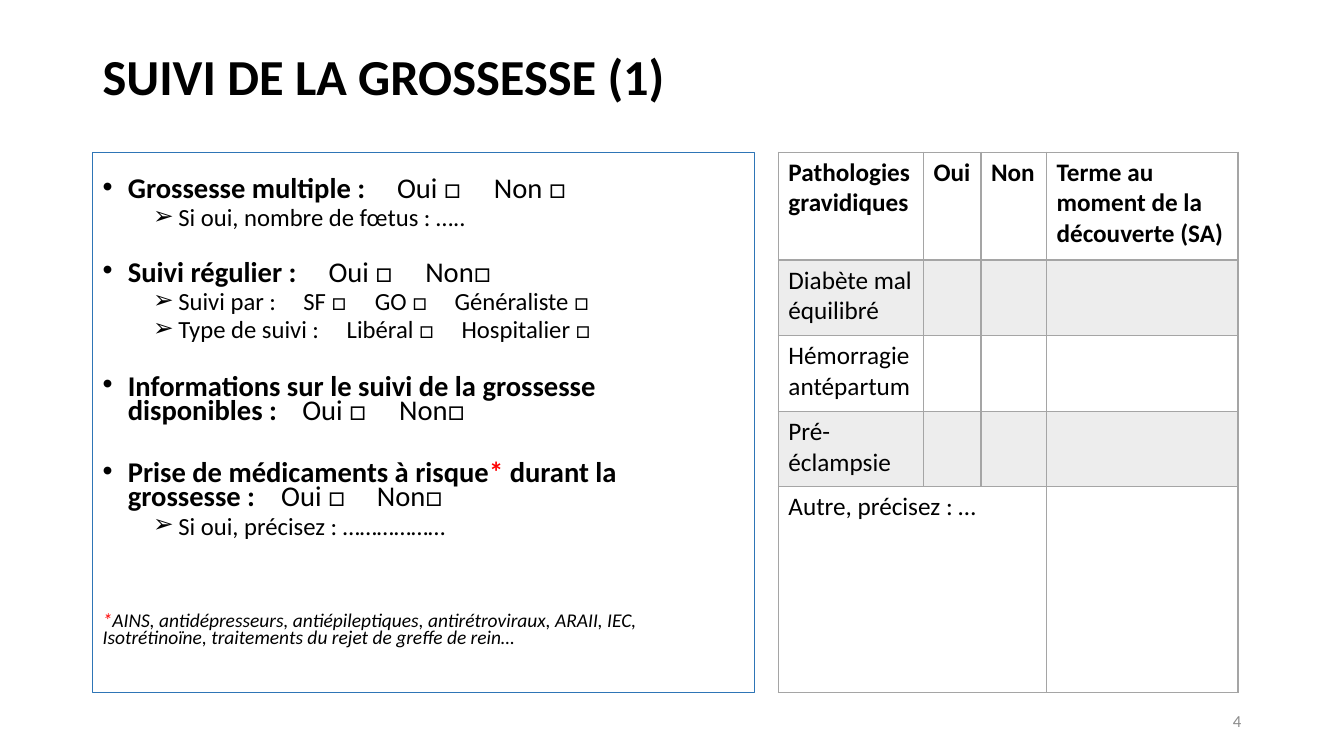
"""Build the pregnancy follow-up form slide."""
from lxml import etree
from pptx import Presentation, util as u
from pptx.dml import color
from pptx.enum import shapes, text
from pptx.oxml import ns

BLACK, RED, GREY = "000000", "FF0000", "A5A5A5"


def style(font, size, hex_color=BLACK, bold=False, italic=False):
    font.name, font.size = "Calibri", u.Pt(size)
    font.bold, font.italic = bold, italic
    font.color.rgb = color.RGBColor.from_string(hex_color)


def add(parent, tag, **attrs):
    return etree.SubElement(parent, ns.qn(tag), {k: str(v) for k, v in attrs.items()})


prs = Presentation()
prs.slide_width, prs.slide_height = u.Inches(13.33), u.Inches(7.5)
s = prs.slides.add_slide(prs.slide_layouts[6])

sp = s.shapes.add_shape(shapes.MSO_SHAPE.RECTANGLE, u.Inches(0.92), u.Inches(1.51),
                        u.Inches(6.56), u.Inches(5.36))
sp.shadow.inherit = False
sp.fill.background()
sp.line.color.rgb = color.RGBColor.from_string("2E75B6")
sp.line.width = u.Pt(0.75)
tf = sp.text_frame
tf.word_wrap = True
tf.vertical_anchor = text.MSO_ANCHOR.TOP
tf.margin_top, tf.margin_right = u.Inches(0.27), u.Inches(0.25)

# level, space before, tab stops, runs as (text, bold, colour)
questions = [
    (0, 0, (2.92, 3.88), [("Grossesse multiple :", True, BLACK), ("\tOui □\tNon □", False, BLACK)]),
    (1, 5, (), [("Si oui, nombre de fœtus : …..", False, BLACK)]),
    (0, 23, (2.24, 3.2), [("Suivi régulier :", True, BLACK), ("\tOui □\tNon□", False, BLACK)]),
    (1, 5, (1.99, 2.7, 3.49), [("Suivi par :\tSF □\tGO □\tGénéraliste □", False, BLACK)]),
    (1, 5, (2.42, 3.56), [("Type de suivi :\tLibéral □\tHospitalier □", False, BLACK)]),
    (0, 24.5, (1.98, 2.94), [("Informations sur le suivi de la grossesse disponibles :", True, BLACK),
                             ("\tOui □\tNon□", False, BLACK)]),
    (0, 27.5, (1.77, 2.72), [("Prise de médicaments à risque", True, BLACK), ("*", True, RED),
                             (" durant la grossesse :", True, BLACK), ("\tOui □\tNon□", False, BLACK)]),
    (1, 5, (), [("Si oui, précisez : ………………", False, BLACK)]),
    (None, 54, (), [("*", False, RED),
                    ("AINS, antidépresseurs, antiépileptiques, antirétroviraux, ARAII, IEC, "
                     "Isotrétinoïne, traitements du rejet de greffe de rein…", False, BLACK)]),
]
bullets = {0: ("•", 0.25, 20.4), 1: ("➢", 0.75, 17.6)}
for i, (level, before, tabs, runs) in enumerate(questions):
    p = tf.add_paragraph() if i else tf.paragraphs[0]
    p.alignment = text.PP_ALIGN.LEFT
    p.line_spacing, p.space_before = 0.7, u.Pt(before)
    size = 13.9
    if level is not None:
        char, indent, size = bullets[level]
        p.level = level
        pPr = p._p.get_or_add_pPr()
        pPr.set("marL", str(u.Inches(indent)))
        pPr.set("indent", str(u.Inches(-0.25)))
        add(pPr, "a:buFont", typeface="Arial")
        add(pPr, "a:buChar", char=char)
        if tabs:
            stops = add(pPr, "a:tabLst")
            for tab in tabs:
                add(stops, "a:tab", pos=u.Inches(tab), algn="l")
    for words, bold, hex_color in runs:
        r = p.add_run()
        r.text = words
        style(r.font, size, hex_color, bold, level is None)

rows = [
    ["Pathologies gravidiques", "Oui", "Non", "Terme au moment de la découverte (SA)"],
    ["Diabète mal équilibré", "", "", ""],
    ["Hémorragie antépartum", "", "", ""],
    ["Pré-éclampsie", "", "", ""],
    ["Autre, précisez : …", "", "", ""],
]
frame = s.shapes.add_table(5, 4, u.Inches(7.72), u.Inches(1.51), u.Inches(4.56), u.Inches(5.36))
table = frame.table
for column, width in zip(table.columns, (1.44, 0.57, 0.65, 1.9)):
    column.width = u.Inches(width)
for row, height in zip(table.rows, (1.07, 0.75, 0.75, 0.75, 2.04)):
    row.height = u.Inches(height)
for i, row in enumerate(rows):
    for j, words in enumerate(row):
        cell = table.cell(i, j)
        cell.text = words
        style(cell.text_frame.paragraphs[0].font, 18, bold=i == 0)
        tcPr = cell._tc.get_or_add_tcPr()
        for side in "LRTB":
            heavy = (i, side) in ((0, "B"), (1, "T"))
            ln = add(tcPr, f"a:ln{side}", w=u.Pt(2 if heavy else 1))
            add(add(ln, "a:solidFill"), "a:srgbClr", val=GREY)
        cell.fill.solid()
        cell.fill.fore_color.rgb = color.RGBColor.from_string("EDEDED" if i in (1, 3) else "FFFFFF")
table.cell(4, 0).merge(table.cell(4, 2))

labels = [
    ("SUIVI DE LA GROSSESSE (1)", (0.92, 0.36, 11.5, 0.78), 36, BLACK, True, text.PP_ALIGN.LEFT),
    ("4", (9.41, 6.95, 3, 0.4), 12, "8C8C8C", False, text.PP_ALIGN.RIGHT),
]
for words, box, size, hex_color, bold, align in labels:
    tf = s.shapes.add_textbox(*map(u.Inches, box)).text_frame
    tf.word_wrap = True
    tf.vertical_anchor = text.MSO_ANCHOR.MIDDLE
    p = tf.paragraphs[0]
    p.text, p.alignment = words, align
    style(p.font, size, hex_color, bold)

prs.save("out.pptx")
